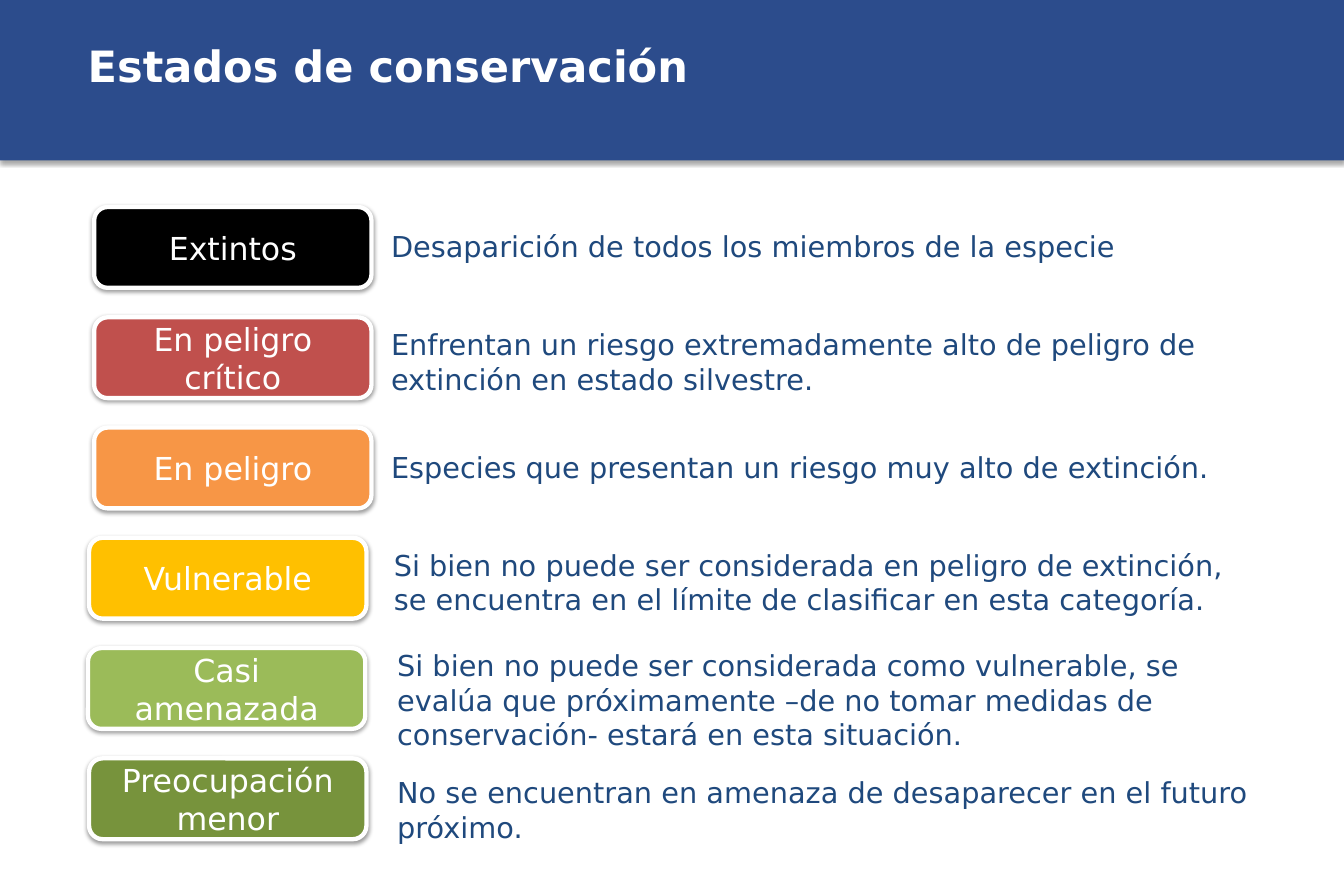
import pptx
import pptx.dml.color
import pptx.enum.shapes
import pptx.enum.text
import pptx.util
from lxml import etree

# Content
TITLE = "Estados de conservación"
# label, fill, label left, description, description left, description top, lines
STATES = [
    ("Extintos", "000000", 65.5,
     "Desaparición de todos los miembros de la especie", 265, 155.5, 1),
    ("En peligro crítico", "C0504D", 65.5,
     "Enfrentan un riesgo extremadamente alto de peligro de extinción "
     "en estado silvestre.", 265, 224, 2),
    ("En peligro", "F79646", 65.5,
     "Especies que presentan un riesgo muy alto de extinción.", 265, 309, 1),
    ("Vulnerable", "FFC000", 62,
     "Si bien no puede ser considerada en peligro de extinción, se encuentra "
     "en el límite de clasificar en esta categoría.", 267, 377.3, 2),
    ("Casi amenazada", "9BBB59", 61.2,
     "Si bien no puede ser considerada como vulnerable, se evalúa que "
     "próximamente –de no tomar medidas de conservación- estará en esta "
     "situación.", 269.3, 447.1, 3),
    ("Preocupación menor", "77933C", 62,
     "No se encuentran en amenaza de desaparecer en el futuro próximo.",
     269.3, 535.7, 2),
]

# Layout and style
FONT = "DejaVu Sans"
WHITE, NAVY, BANNER = "FFFFFF", "1F497D", "2C4C8C"
SLIDE_W, SLIDE_H = 935.3, 614.9
BANNER_H = 111.6
LABEL_TOP, LABEL_STEP, LABEL_W, LABEL_H = 144, 76.7, 193, 56.2
DESCRIPTION_W, LINE_H, INSETS = 619, 24, 7.5
DRAWING = "http://schemas.openxmlformats.org/drawingml/2006/main"

Pt = pptx.util.Pt
SHAPES = pptx.enum.shapes.MSO_SHAPE
ALIGN = pptx.enum.text.PP_ALIGN
ANCHOR = pptx.enum.text.MSO_ANCHOR


def color(hex_code):
    return pptx.dml.color.RGBColor.from_string(hex_code)


def add_shadow(shape, distance, opacity):
    shape.shadow.inherit = False
    effects = shape._element.spPr.find(f"{{{DRAWING}}}effectLst")
    effects.append(etree.fromstring(
        f'<a:outerShdw xmlns:a="{DRAWING}" blurRad="{Pt(3.1)}" '
        f'dist="{Pt(distance)}" dir="5400000" rotWithShape="0">'
        f'<a:srgbClr val="000000"><a:alpha val="{opacity * 1000}"/></a:srgbClr>'
        '</a:outerShdw>'))


def add_block(kind, left, top, width, height, fill):
    block = slide.shapes.add_shape(kind, Pt(left), Pt(top), Pt(width), Pt(height))
    block.fill.solid()
    block.fill.fore_color.rgb = color(fill)
    return block


def write(frame, text, size, hex_code, bold=False, align=ALIGN.LEFT):
    frame.word_wrap = True
    paragraph = frame.paragraphs[0]
    paragraph.alignment = align
    run = paragraph.add_run()
    run.text = text
    run.font.name = FONT
    run.font.size = Pt(size)
    run.font.bold = bold
    run.font.color.rgb = color(hex_code)


def add_text(left, top, width, height, text, size, hex_code, bold=False):
    box = slide.shapes.add_textbox(Pt(left), Pt(top), Pt(width), Pt(height))
    write(box.text_frame, text, size, hex_code, bold)
    return box


deck = pptx.Presentation()
deck.slide_width, deck.slide_height = Pt(SLIDE_W), Pt(SLIDE_H)
slide = deck.slides.add_slide(deck.slide_layouts[6])

# Banner and title
banner = add_block(SHAPES.RECTANGLE, 0, 0, SLIDE_W, BANNER_H, BANNER)
banner.line.fill.background()
add_shadow(banner, 1.8, 35)
add_text(54, 23.8, 643, 90, TITLE, 30, WHITE, bold=True)

# One row per conservation state
for row, (name, fill, left, description, text_left, text_top, lines) in enumerate(STATES):
    label = add_block(SHAPES.ROUNDED_RECTANGLE, left, LABEL_TOP + row * LABEL_STEP,
                      LABEL_W, LABEL_H, fill)
    label.line.color.rgb = color(WHITE)
    label.line.width = Pt(3)
    add_shadow(label, 1.6, 38)
    label.text_frame.vertical_anchor = ANCHOR.MIDDLE
    write(label.text_frame, name, 22, WHITE, align=ALIGN.CENTER)

    meaning = add_text(text_left, text_top, DESCRIPTION_W, lines * LINE_H + INSETS,
                       description, 20, NAVY)
    meaning.text_frame.auto_size = pptx.enum.text.MSO_AUTO_SIZE.SHAPE_TO_FIT_TEXT

deck.save("out.pptx")
